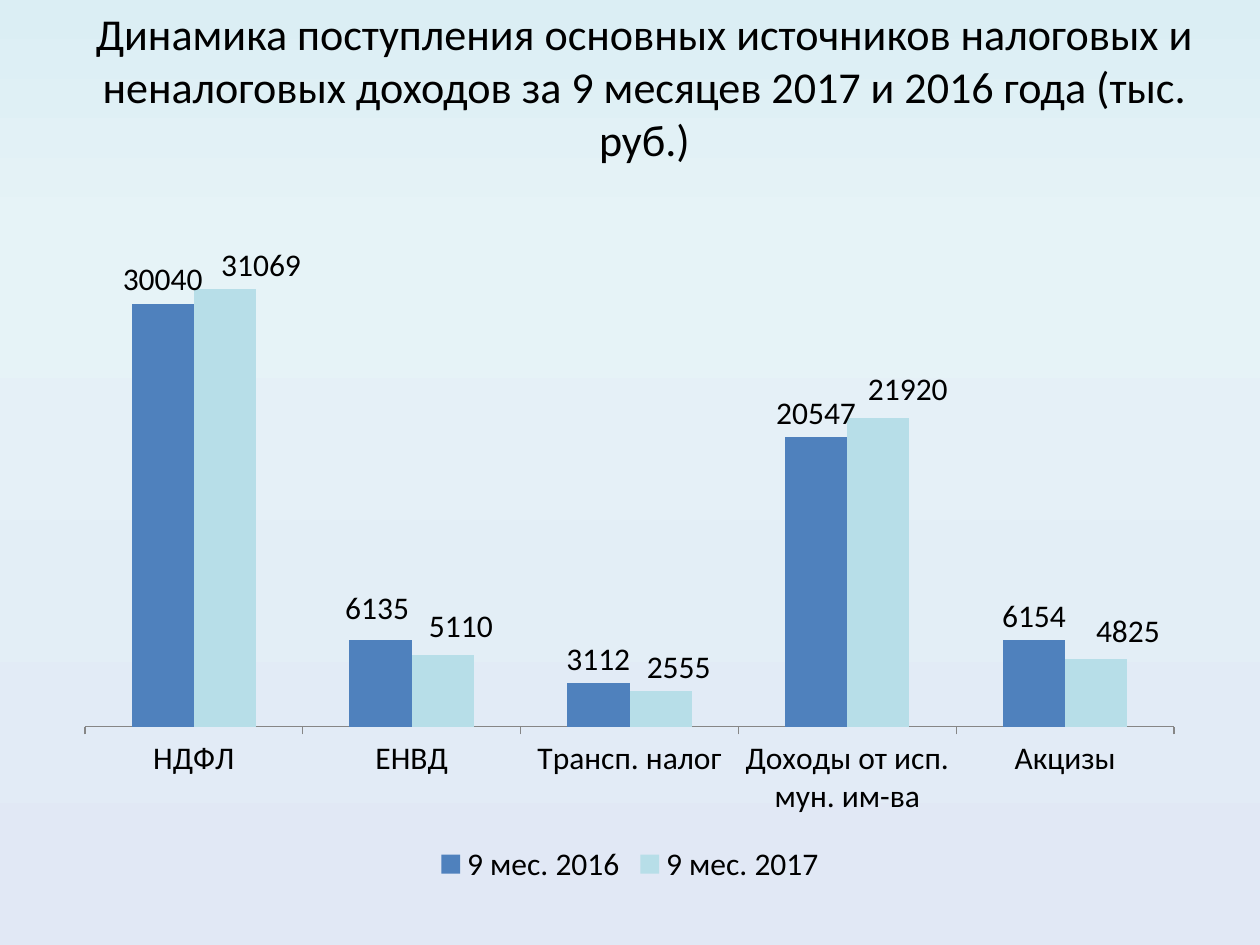
from lxml.etree import SubElement
from pptx import Presentation
from pptx.chart.data import CategoryChartData
from pptx.dml.color import RGBColor
from pptx.enum.chart import XL_CHART_TYPE, XL_LABEL_POSITION, XL_LEGEND_POSITION, XL_TICK_MARK
from pptx.enum.text import MSO_ANCHOR, PP_ALIGN
from pptx.oxml import parse_xml
from pptx.oxml.ns import nsdecls, qn
from pptx.util import Pt

BLACK = RGBColor(0x00, 0x00, 0x00)
BLUE = RGBColor(0x4F, 0x81, 0xBD)
AQUA = RGBColor(0xB7, 0xDE, 0xE8)
GREY = RGBColor(0x86, 0x86, 0x86)
BG_STOPS = [(0, RGBColor(0xDB, 0xEE, 0xF4)), (25, RGBColor(0xE6, 0xF3, 0xF7)),
            (100, RGBColor(0xE1, 0xE8, 0xF5))]
FONT = "Calibri"


def set_font(font, size):
    font.name, font.size, font.bold = FONT, Pt(size), False
    font.color.rgb = BLACK


def add_layout(parent, index, **values):
    """Insert a manual chart layout; values are percent of the chart size."""
    layout = parse_xml(f'<c:layout {nsdecls("c")}><c:manualLayout/></c:layout>')
    for tag, value in values.items():
        text = value if isinstance(value, str) else str(value / 100)
        SubElement(layout[0], qn(f"c:{tag}")).set("val", text)
    parent.insert(index, layout)


prs = Presentation()
prs.slide_width, prs.slide_height = Pt(720), Pt(540)
s = prs.slides.add_slide(prs.slide_layouts[6])

# Background: three-stop vertical gradient
fill = s.background.fill
fill.gradient()
fill.gradient_angle = 270
stops = s.background._cSld.find(".//" + qn("a:gsLst"))
for old in list(stops):
    stops.remove(old)
for pos, color in BG_STOPS:
    gs = SubElement(stops, qn("a:gs"), pos=str(pos * 1000))
    SubElement(gs, qn("a:srgbClr"), val=str(color))

# Title
tf = s.shapes.add_textbox(Pt(25.2), Pt(9.4), Pt(686.2), Pt(79.2)).text_frame
tf.word_wrap = True
tf.vertical_anchor = MSO_ANCHOR.MIDDLE
p = tf.paragraphs[0]
p.text = ("Динамика поступления основных источников налоговых и неналоговых "
          "доходов за 9 месяцев 2017 и 2016 года (тыс. руб.)")
p.alignment = PP_ALIGN.CENTER
set_font(p.font, 25.2)

# Chart data
data = CategoryChartData()
data.categories = ["НДФЛ", "ЕНВД", "Трансп. налог", "Доходы от исп. мун. им-ва", "Акцизы"]
data.add_series("9 мес. 2016", (30040, 6135, 3112, 20547, 6154))
data.add_series("9 мес. 2017", (31069, 5110, 2555, 21920, 4825))
chart = s.shapes.add_chart(XL_CHART_TYPE.COLUMN_CLUSTERED, Pt(36), Pt(126),
                           Pt(648), Pt(382.3), data).chart
set_font(chart.font, 18)
chart.has_title = False
chart.has_legend = True
chart.legend.position = XL_LEGEND_POSITION.BOTTOM
chart.legend.include_in_layout = False
set_font(chart.legend.font, 18)

# Axes and plot area
axis = chart.category_axis
axis.major_tick_mark = XL_TICK_MARK.OUTSIDE
axis.format.line.color.rgb = GREY
axis.format.line.width = Pt(0.75)
set_font(axis.tick_labels.font, 18)
axis = chart.value_axis
axis.visible = False
axis.has_major_gridlines = False
axis.minimum_scale, axis.maximum_scale = 0, 35000
plot = chart.plots[0]
plot.gap_width, plot.overlap, plot.vary_by_categories = 150, 0, False
plot_area = chart._chartSpace.find(".//" + qn("c:plotArea"))
for old in plot_area.findall(qn("c:layout")):
    plot_area.remove(old)
add_layout(plot_area, 0, layoutTarget="inner", xMode="edge", yMode="edge",
           x=1.94, y=2, w=96.05, h=73.7)

# Series colours, labels and label shifts (percent of the chart: right, down)
SHIFTS = [{1: (-0.3, -1.2)},
          {0: (3.2, 0), 1: (1.6, -0.7), 2: (1.6, 0), 3: (2.6, -0.7), 4: (2.8, -0.6)}]
for series, color, shifts in zip(plot.series, (BLUE, AQUA), SHIFTS):
    series.format.fill.solid()
    series.format.fill.fore_color.rgb = color
    series.invert_if_negative = False
    labels = series.data_labels
    labels.show_value = True
    labels.position = XL_LABEL_POSITION.OUTSIDE_END
    set_font(labels.font, 18)
    for i, (dx, dy) in shifts.items():
        label = series.points[i].data_label
        label.position = XL_LABEL_POSITION.OUTSIDE_END
        set_font(label.font, 18)
    for dlbl, (dx, dy) in zip(series._element.iter(qn("c:dLbl")), shifts.values()):
        add_layout(dlbl, 1, x=dx, y=dy)

prs.save("out.pptx")
